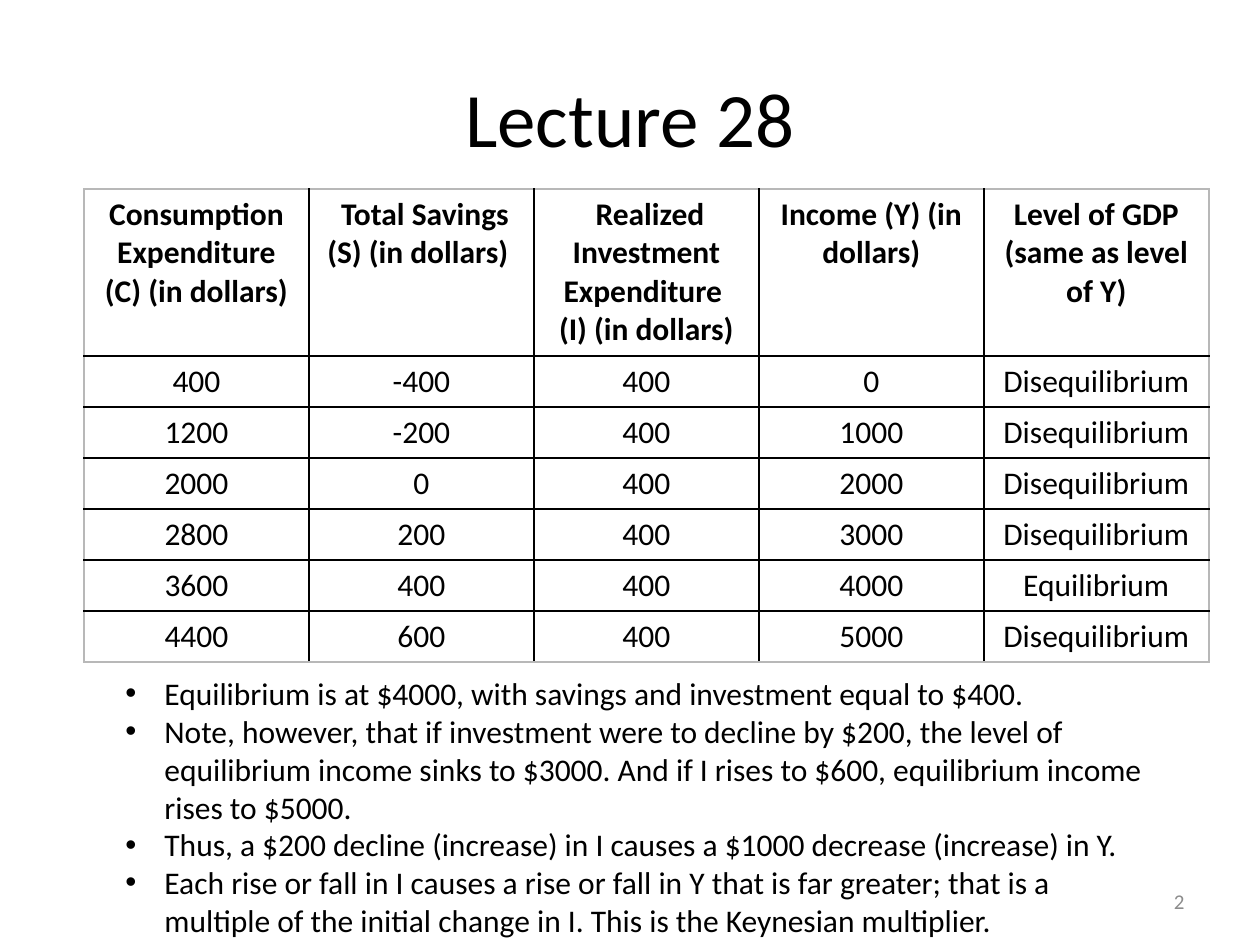
from dataclasses import dataclass

from lxml.etree import SubElement
from pptx import Presentation
from pptx.dml.color import RGBColor
from pptx.enum.text import MSO_ANCHOR as Anchor, PP_ALIGN as Align
from pptx.oxml.ns import qn
from pptx.util import Pt


@dataclass(frozen=True)
class Theme:
    font: str = "Calibri"
    ink: str = "000000"
    muted: str = "8C8C8C"
    frame: str = "B8B8B8"
    title: int = 44
    body: int = 18
    small: int = 12
    border: int = 1


THEME = Theme()
SCALE = 914400 / 126

TITLE = "Lecture 28"
PAGE_NUMBER = "2"
HEADERS = [
    "Consumption Expenditure (C) (in dollars)",
    " Total Savings (S) (in dollars) ",
    " Realized Investment Expenditure \n(I) (in dollars)",
    "Income (Y) (in dollars)",
    "Level of GDP (same as level of Y)",
]
LEVELS = [
    ("400", "-400", "400", "0", "Disequilibrium"),
    ("1200", "-200", "400", "1000", "Disequilibrium"),
    ("2000", "0", "400", "2000", "Disequilibrium"),
    ("2800", "200", "400", "3000", "Disequilibrium"),
    ("3600", "400", "400", "4000", "Equilibrium"),
    ("4400", "600", "400", "5000", "Disequilibrium"),
]
NOTES = [
    "Equilibrium is at $4000, with savings and investment equal to $400.",
    "Note, however, that if investment were to decline by $200, the level of "
    "equilibrium income sinks to $3000. And if I rises to $600, equilibrium "
    "income rises to $5000.",
    "Thus, a $200 decline (increase) in I causes a $1000 decrease (increase) in Y.",
    "Each rise or fall in I causes a rise or fall in Y that is far greater; "
    "that is a multiple of the initial change in I. This is the Keynesian multiplier.",
]

TITLE_BOX = (63, 38, 1134, 157)
NOTES_BOX = (113, 668, 1042, 280)
NUMBER_BOX = (903, 876, 294, 50)
TABLE_LEFT, TABLE_TOP = 84, 189
COLUMN_WIDTH, HEADER_HEIGHT, ROW_HEIGHT = 225, 167, 51
BULLET_INDENT = 39


def px(length):
    return round(length * SCALE)


def write(frame, lines, size, color=THEME.ink, align=Align.LEFT, bold=False):
    frame.text = "\n".join(lines)
    for para in frame.paragraphs:
        para.alignment = align
        para.font.name = THEME.font
        para.font.size = Pt(size)
        para.font.bold = bold
        para.font.color.rgb = RGBColor.from_string(color)


def add_text(page, place, lines, size, anchor=Anchor.MIDDLE, **style):
    frame = page.shapes.add_textbox(*map(px, place)).text_frame
    frame.word_wrap = True
    frame.vertical_anchor = anchor
    write(frame, lines, size, **style)
    return frame


def add_bullet(para):
    props = para._p.get_or_add_pPr()
    props.set("marL", str(px(BULLET_INDENT)))
    props.set("indent", str(-px(BULLET_INDENT)))
    SubElement(props, qn("a:buFont"), typeface="Arial")
    SubElement(props, qn("a:buChar"), char="•")


def set_borders(cell, colors):
    props = cell._tc.get_or_add_tcPr()
    for side, color in colors.items():
        line = SubElement(props, qn(f"a:ln{side}"), w=str(Pt(THEME.border)))
        fill = SubElement(line, qn("a:solidFill"))
        SubElement(fill, qn("a:srgbClr"), val=color)


def add_levels_table(page):
    rows = [HEADERS, *LEVELS]
    last_row, last_column = len(rows) - 1, len(HEADERS) - 1
    width = COLUMN_WIDTH * len(HEADERS)
    height = HEADER_HEIGHT + ROW_HEIGHT * len(LEVELS)
    place = map(px, (TABLE_LEFT, TABLE_TOP, width, height))
    table = page.shapes.add_table(len(rows), len(HEADERS), *place).table
    for column in table.columns:
        column.width = px(COLUMN_WIDTH)
    for r, values in enumerate(rows):
        table.rows[r].height = px(ROW_HEIGHT if r else HEADER_HEIGHT)
        for c, value in enumerate(values):
            cell = table.cell(r, c)
            write(cell.text_frame, value.split("\n"), THEME.body,
                  align=Align.CENTER, bold=r == 0)
            outer = {"L": c == 0, "R": c == last_column, "T": r == 0, "B": r == last_row}
            set_borders(cell, {side: THEME.frame if edge else THEME.ink
                               for side, edge in outer.items()})
            cell.fill.background()


def main():
    deck = Presentation()
    deck.slide_width, deck.slide_height = px(1260), px(945)
    page = deck.slides.add_slide(deck.slide_layouts[6])
    add_text(page, TITLE_BOX, [TITLE], THEME.title, align=Align.CENTER)
    add_levels_table(page)
    notes = add_text(page, NOTES_BOX, NOTES, THEME.body, anchor=Anchor.TOP)
    for para in notes.paragraphs:
        add_bullet(para)
    add_text(page, NUMBER_BOX, [PAGE_NUMBER], THEME.small,
             color=THEME.muted, align=Align.RIGHT)
    deck.save("out.pptx")


if __name__ == "__main__":
    main()
